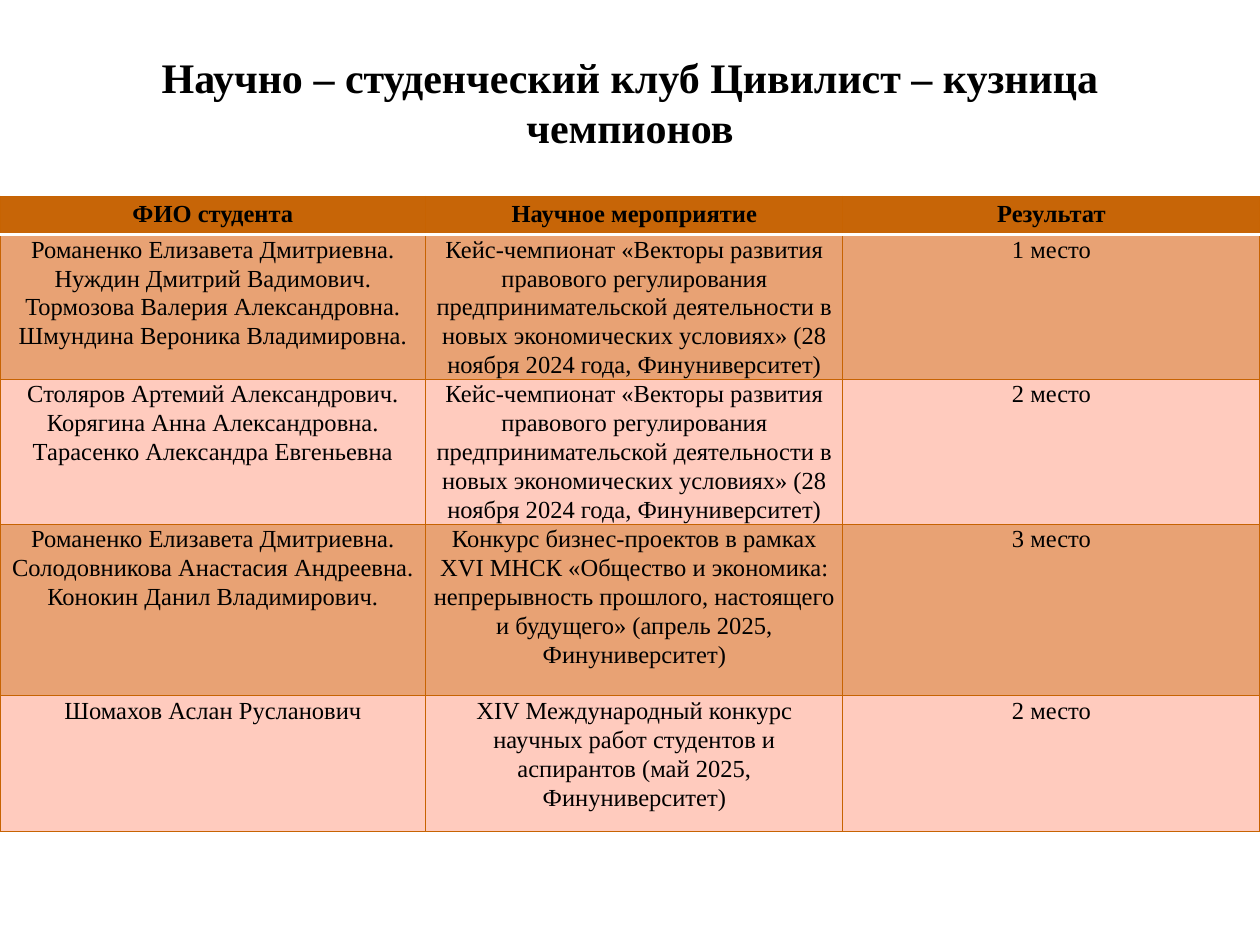
import pptx
import pptx.dml.color
import pptx.enum.text
import pptx.oxml
import pptx.util
from pptx.util import Inches

RGBColor = pptx.dml.color.RGBColor
BLACK = RGBColor(0x00, 0x00, 0x00)
WHITE = RGBColor(0xFF, 0xFF, 0xFF)
HEADER = RGBColor(0xC7, 0x65, 0x07)
BORDER = RGBColor(0xC7, 0x63, 0x02)
BAND_DARK = RGBColor(0xE8, 0xA2, 0x74)
BAND_LIGHT = RGBColor(0xFF, 0xCB, 0xBE)

TITLE = "Научно – студенческий клуб Цивилист – кузница чемпионов"
CASE_CONTEST = (
    "Кейс-чемпионат «Векторы развития правового регулирования "
    "предпринимательской деятельности в новых экономических условиях» "
    "(28 ноября 2024 года, Финуниверситет)"
)
ROWS = [
    ("ФИО студента", "Научное мероприятие", "Результат"),
    ("Романенко Елизавета Дмитриевна.\nНуждин Дмитрий Вадимович.\n"
     "Тормозова Валерия Александровна. Шмундина Вероника Владимировна.",
     CASE_CONTEST, "1 место"),
    ("Столяров Артемий Александрович. Корягина Анна Александровна.\n"
     "Тарасенко Александра Евгеньевна",
     CASE_CONTEST, "2 место"),
    ("Романенко Елизавета Дмитриевна. Солодовникова Анастасия Андреевна. "
     "Конокин Данил Владимирович.",
     "Конкурс бизнес-проектов в рамках XVI МНСК «Общество и экономика: "
     "непрерывность прошлого, настоящего и будущего» "
     "(апрель 2025, Финуниверситет)", "3 место"),
    ("Шомахов Аслан Русланович",
     "XIV Международный конкурс научных работ студентов и аспирантов "
     "(май 2025, Финуниверситет)", "2 место"),
]
COL_WIDTHS = [3.38, 3.31, 3.31]
ROW_HEIGHTS = [0.3, 1.13, 1.13, 1.36, 1.08]


class SlideBuilder:
    font = "Times New Roman"
    cell_format = {
        "margin_left": Inches(0.04), "margin_right": Inches(0.04),
        "margin_top": 0, "margin_bottom": 0,
        "vertical_anchor": pptx.enum.text.MSO_ANCHOR.TOP,
    }

    def __init__(self, slide):
        self.s = slide

    def set_text(self, tf, text, size, bold, spacing=None):
        tf.text = text
        tf.word_wrap = True
        for p in tf.paragraphs:
            p.alignment = pptx.enum.text.PP_ALIGN.CENTER
            p.line_spacing = spacing
            for r in p.runs:
                r.font.color.rgb = BLACK
                fmt = {"name": self.font, "size": pptx.util.Pt(size), "bold": bold}
                for key, value in fmt.items():
                    setattr(r.font, key, value)

    def title(self, text, left, top, width, height):
        sp = self.s.shapes.title
        box = {"left": left, "top": top, "width": width, "height": height}
        for key, value in box.items():
            setattr(sp, key, Inches(value))
        sp.text_frame.vertical_anchor = pptx.enum.text.MSO_ANCHOR.MIDDLE
        self.set_text(sp.text_frame, text, 24, True)

    def border(self, cell, side, color, points):
        """Draw one side (L, R, T or B); call before the cell is filled."""
        cell._tc.get_or_add_tcPr().append(pptx.oxml.parse_xml(
            '<a:ln%s xmlns:a="http://schemas.openxmlformats.org/drawingml/2006/main"'
            ' w="%d"><a:solidFill><a:srgbClr val="%s"/></a:solidFill></a:ln%s>'
            % (side, pptx.util.Pt(points), color, side)))

    def cell(self, cell, text, row):
        is_header = row == 0
        for key, value in self.cell_format.items():
            setattr(cell, key, value)
        for side in "LRTB":
            under_header = (row, side) in [(0, "B"), (1, "T")]
            self.border(cell, side, *((WHITE, 2) if under_header else (BORDER, 0.75)))
        cell.fill.solid()
        band = BAND_DARK if row % 2 else BAND_LIGHT
        cell.fill.fore_color.rgb = HEADER if is_header else band
        self.set_text(cell.text_frame, text, 14, is_header, 1.15 if is_header else 1.07)

    def table(self, rows, left, top, widths, heights):
        frame = self.s.shapes.add_table(
            len(rows), len(widths), Inches(left), Inches(top),
            Inches(sum(widths)), Inches(sum(heights)))
        table = frame.table
        for col, width in zip(table.columns, widths):
            col.width = Inches(width)
        for row, height in zip(table.rows, heights):
            row.height = Inches(height)
        for i, texts in enumerate(rows):
            for j, text in enumerate(texts):
                self.cell(table.cell(i, j), text, i)


def main():
    prs = pptx.Presentation()
    prs.slide_width, prs.slide_height = Inches(10), Inches(7.5)
    builder = SlideBuilder(prs.slides.add_slide(prs.slide_layouts[5]))
    builder.title(TITLE, 0.5, 0.18, 9, 1.25)
    builder.table(ROWS, 0, 1.56, COL_WIDTHS, ROW_HEIGHTS)
    prs.save("out.pptx")


if __name__ == "__main__":
    main()
